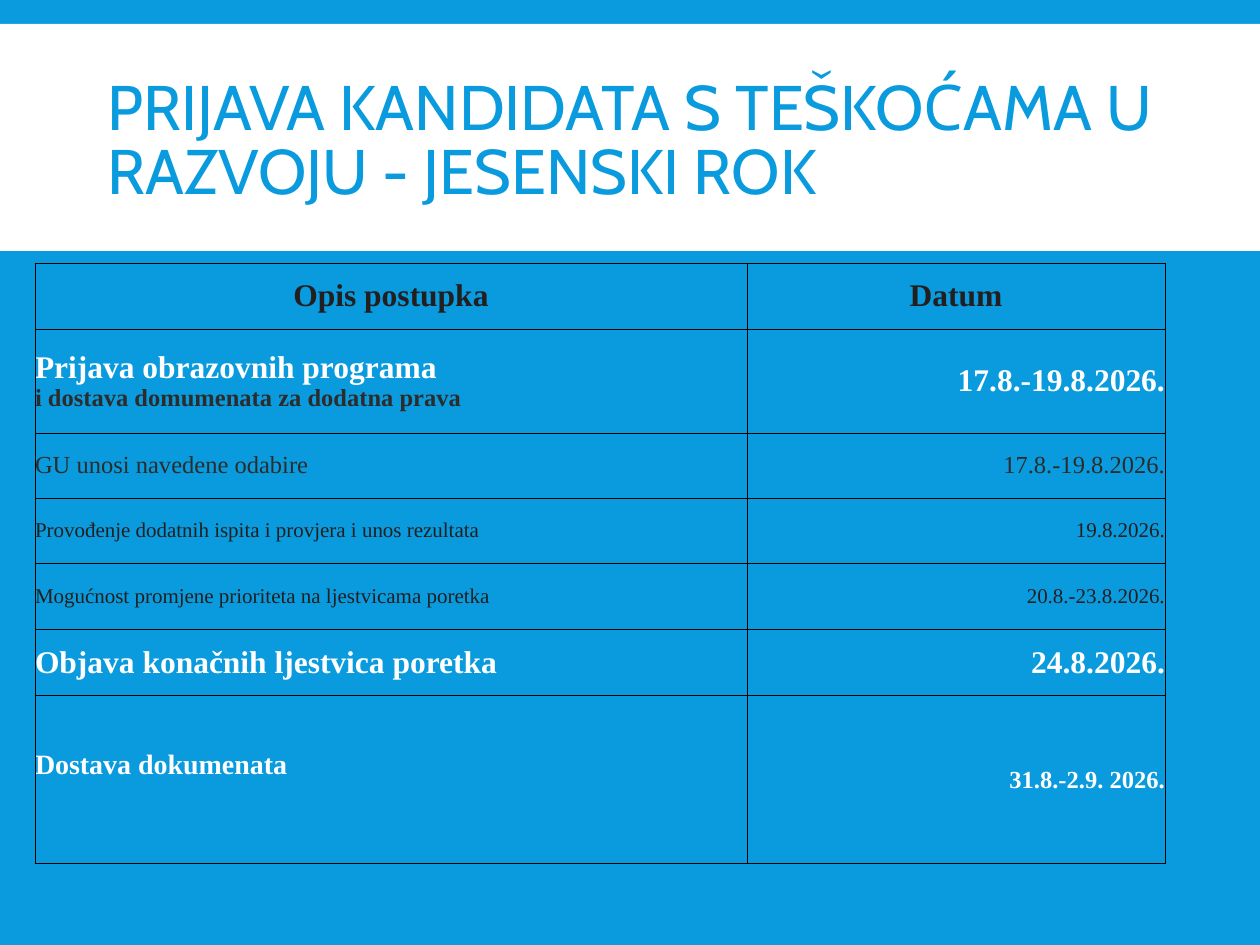
from lxml import etree
from pptx import Presentation
from pptx import util as u
from pptx.dml.color import RGBColor
from pptx.enum import shapes, text
from pptx.oxml import ns

SCALE = 914400 / 126  # EMU per px
COLORS = {
    "blue": "099BDD",
    "white": "FFFFFF",
    "ink": "231F20",
    "gray": "2C2C2C",
    "border": "000000",
}


def px(length):
    return u.Emu(round(length * SCALE))


def format_run(paragraph, font_name, size, color, bold=False):
    font = paragraph.runs[0].font
    font.name = font_name
    font.size = u.Pt(size)
    font.bold = bold
    font.color.rgb = RGBColor.from_string(COLORS[color])


presentation = Presentation()
presentation.slide_width, presentation.slide_height = px(1260), px(945)
slide = presentation.slides.add_slide(presentation.slide_layouts[6])

# Background and title band
slide.background.fill.solid()
slide.background.fill.fore_color.rgb = RGBColor.from_string(COLORS["blue"])
band = slide.shapes.add_shape(shapes.MSO_SHAPE.RECTANGLE, px(0), px(24), px(1260), px(227))
band.shadow.inherit = False
band.fill.solid()
band.fill.fore_color.rgb = RGBColor.from_string(COLORS["white"])
band.line.fill.background()

# Title
title = slide.shapes.add_textbox(px(95), px(39), px(1071), px(208))
title_frame = title.text_frame
title_frame.word_wrap = True
title_frame.vertical_anchor = text.MSO_ANCHOR.MIDDLE
title_frame.text = "PRIJAVA KANDIDATA S TEŠKOĆAMA U RAZVOJU - JESENSKI ROK"
title_frame.paragraphs[0].line_spacing = 0.85
format_run(title_frame.paragraphs[0], "Cabin", 36, "blue")

# Table rows: height, then the lines of each cell as (wording, size, color, bold)
rows = [
    (66, [("Opis postupka", 18, "ink", True)], [("Datum", 18, "ink", True)]),
    (104, [("Prijava obrazovnih programa", 18, "white", True),
           ("i dostava domumenata za dodatna prava", 14, "gray", True)],
     [("17.8.-19.8.2026.", 18, "white", True)]),
    (65, [("GU unosi navedene odabire", 14, "gray", False)],
     [("17.8.-19.8.2026.", 14, "gray", False)]),
    (66, [("Provođenje dodatnih ispita i provjera i unos rezultata", 12, "ink", False)],
     [("19.8.2026.", 12, "ink", False)]),
    (66, [("Mogućnost promjene prioriteta na ljestvicama poretka", 12, "ink", False)],
     [("20.8.-23.8.2026.", 12, "ink", False)]),
    (66, [("Objava konačnih ljestvica poretka", 18, "white", True)],
     [("24.8.2026.", 18, "white", True)]),
    (168, [("Dostava dokumenata", 16, "white", True)],
     [("31.8.-2.9. 2026.", 14, "white", True)]),
]
column_widths = [712, 418]
table = slide.shapes.add_table(
    len(rows), len(column_widths), px(35), px(263),
    px(sum(column_widths)), px(sum(row[0] for row in rows))).table
table.first_row = False
table.horz_banding = False
for column, width in zip(table.columns, column_widths):
    column.width = px(width)

for row_index, (height, *cells) in enumerate(rows):
    table.rows[row_index].height = px(height)
    for column_index, lines in enumerate(cells):
        cell = table.cell(row_index, column_index)
        cell.margin_left = cell.margin_right = cell.margin_top = cell.margin_bottom = 0
        cell.vertical_anchor = text.MSO_ANCHOR.MIDDLE
        cell.fill.background()

        # Cell text
        if row_index == 0:
            alignment = text.PP_ALIGN.CENTER
        else:
            alignment = (text.PP_ALIGN.LEFT, text.PP_ALIGN.RIGHT)[column_index]
        cell.text_frame.text = "\n".join(line[0] for line in lines)
        for paragraph, (_, size, color, bold) in zip(cell.text_frame.paragraphs, lines):
            paragraph.alignment = alignment
            format_run(paragraph, "Times New Roman", size, color, bold)

        # Cell borders, which come before the fill
        properties = cell._tc.get_or_add_tcPr()
        for position, side in enumerate(("lnL", "lnR", "lnT", "lnB")):
            border = etree.Element(ns.qn("a:" + side), w=str(u.Pt(0.6)))
            border_fill = etree.SubElement(border, ns.qn("a:solidFill"))
            etree.SubElement(border_fill, ns.qn("a:srgbClr"), val=COLORS["border"])
            properties.insert(position, border)

# The last description sits a little above the middle
table.cell(len(rows) - 1, 0).margin_bottom = px(30)

presentation.save("out.pptx")
